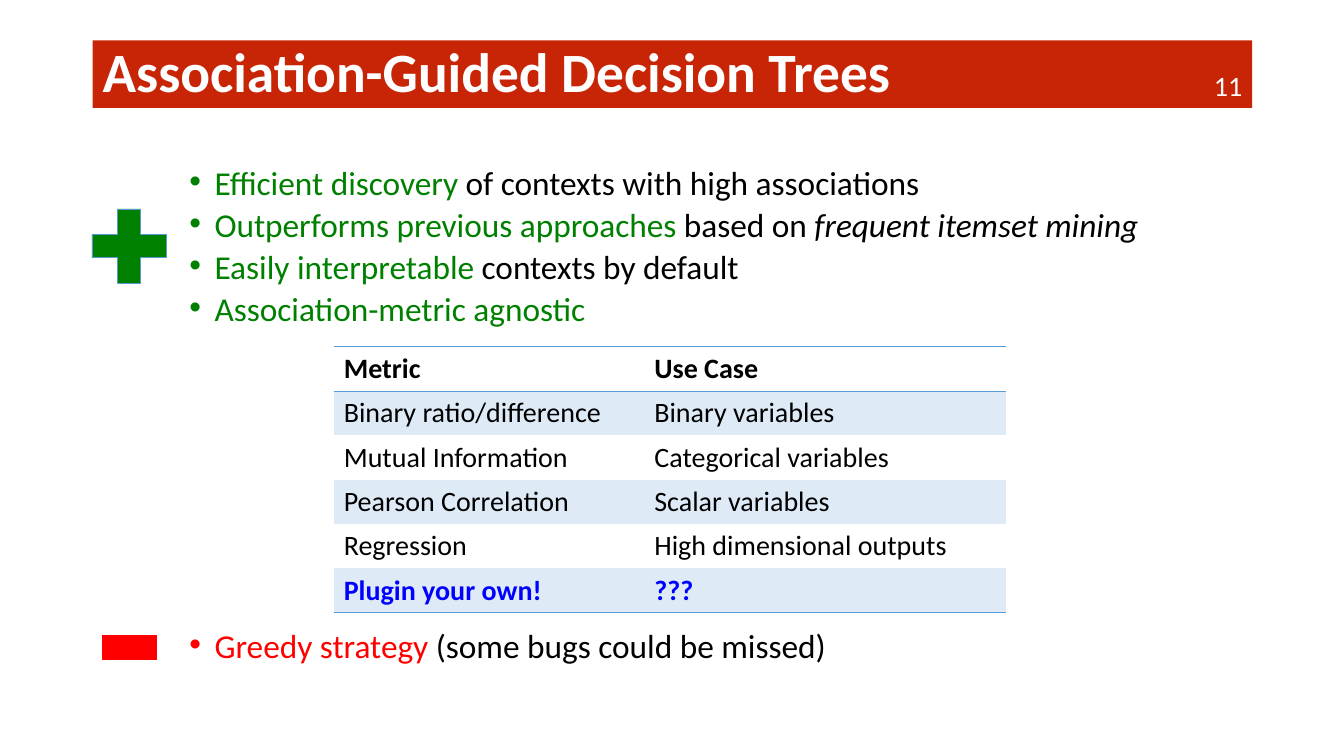
import pptx
import pptx.util
import pptx.dml.color
import pptx.enum.shapes
import pptx.enum.text
import pptx.oxml
import pptx.oxml.ns
from pptx.util import Inches

RGBColor = pptx.dml.color.RGBColor
SHAPE = pptx.enum.shapes.MSO_SHAPE
ANCHOR = pptx.enum.text.MSO_ANCHOR
ALIGN = pptx.enum.text.PP_ALIGN

WHITE = RGBColor(0xFF, 0xFF, 0xFF)
BLACK = RGBColor(0x00, 0x00, 0x00)
BRICK = RGBColor(0xC8, 0x25, 0x06)
GREEN = RGBColor(0x00, 0x80, 0x00)
RED = RGBColor(0xFF, 0x00, 0x00)
BLUE = RGBColor(0x00, 0x00, 0xFF)
STEEL = RGBColor(0x5B, 0x9B, 0xD5)
BAND = RGBColor(0xDE, 0xEB, 0xF7)

FONT = "Calibri"
NO_STYLE = "{2D5ABB26-0587-4C30-8999-92F81FD0307C}"
BULLET_STEP = 0.417

PROS = [
    [("Efficient discovery ", GREEN), ("of contexts with high associations", BLACK)],
    [("Outperforms previous approaches ", GREEN), ("based on ", BLACK),
     ("frequent itemset mining", BLACK, {"italic": True})],
    [("Easily interpretable ", GREEN), ("contexts by default", BLACK)],
    [("Association-metric agnostic", GREEN)],
]
CONS = [[("Greedy strategy", RED), (" (some bugs could be missed)", BLACK)]]
METRICS = [
    ("Metric", "Use Case"),
    ("Binary ratio/difference", "Binary variables"),
    ("Mutual Information", "Categorical variables"),
    ("Pearson Correlation", "Scalar variables"),
    ("Regression", "High dimensional outputs"),
    ("Plugin your own!", "???"),
]


def add_span(para, text, size, color, extra=None):
    span = para.add_run()
    span.text = text
    span.font.color.rgb = color
    formats = {"name": FONT, "size": pptx.util.Pt(size), **(extra or {})}
    for name, value in formats.items():
        setattr(span.font, name, value)


def add_filled_shape(page, kind, box, fill, line=None):
    shape = page.shapes.add_shape(kind, *map(Inches, box))
    shape.shadow.inherit = False
    shape.fill.solid()
    shape.fill.fore_color.rgb = fill
    if line is None:
        shape.line.fill.background()
    else:
        shape.line.color.rgb = line
        shape.line.width = pptx.util.Pt(0.5)
    return shape


def add_header(page, box, title, number):
    """Draw the title bar with the page number in its lower right corner."""
    left, top, width, height = box
    bar = add_filled_shape(page, SHAPE.RECTANGLE, box, BRICK)
    number_width, number_height = 0.69, 0.4
    corner = page.shapes.add_textbox(
        Inches(left + width - number_width), Inches(top + height - number_height),
        Inches(number_width), Inches(number_height))
    for shape, text, size, align, bold in (
            (bar, title, 39.6, ALIGN.LEFT, True),
            (corner, number, 20, ALIGN.RIGHT, False)):
        frame = shape.text_frame
        frame.word_wrap = True
        frame.vertical_anchor = ANCHOR.MIDDLE
        para = frame.paragraphs[0]
        para.alignment = align
        para.line_spacing = 0.9
        add_span(para, text, size, WHITE, {"bold": bold})


def add_bullets(page, box, items):
    frame = page.shapes.add_textbox(*map(Inches, box)).text_frame
    frame.word_wrap = True
    for index, item in enumerate(items):
        para = frame.add_paragraph() if index else frame.paragraphs[0]
        para.line_spacing = 0.7
        para.space_before = pptx.util.Pt(10)
        props = para._p.get_or_add_pPr()
        props.set("marL", str(Inches(0.25)))
        props.set("indent", str(Inches(-0.25)))
        for tag, key, value in (("a:buFont", "typeface", "Arial"), ("a:buChar", "char", "•")):
            bullet = pptx.oxml.parse_xml(f"<{tag} {pptx.oxml.ns.nsdecls('a')}/>")
            bullet.set(key, value)
            props.append(bullet)
        for text, color, *extra in item:
            add_span(para, text, 23.8, color, *extra)


def add_rule(cell, side):
    """Draw a cell border on the top (T) or bottom (B) side."""
    border = pptx.oxml.parse_xml(
        f'<a:ln{side} {pptx.oxml.ns.nsdecls("a")} w="12700"><a:solidFill>'
        f'<a:srgbClr val="{STEEL}"/></a:solidFill></a:ln{side}>')
    props = cell._tc.get_or_add_tcPr()
    rules = [child for child in props if child.tag.endswith(("lnT", "lnB"))]
    props.insert(len(rules), border)


def add_metric_table(page, box, widths, rows):
    frame = page.shapes.add_table(len(rows), len(widths), *map(Inches, box))
    table = frame.table
    table.first_row = table.horz_banding = False
    table._tbl.tblPr.find(pptx.oxml.ns.qn("a:tableStyleId")).text = NO_STYLE
    for column, width in zip(table.columns, widths):
        column.width = Inches(width)
    last = len(rows) - 1
    for r, row in enumerate(rows):
        table.rows[r].height = Inches(box[3] / len(rows))
        for c, text in enumerate(row):
            cell = table.cell(r, c)
            if r % 2:
                cell.fill.solid()
                cell.fill.fore_color.rgb = BAND
            else:
                cell.fill.background()
            add_span(cell.text_frame.paragraphs[0], text, 20,
                     BLUE if r == last else BLACK, {"bold": r in (0, last)})
            if r == 0:
                add_rule(cell, "T")
            if r in (0, last):
                add_rule(cell, "B")


def main():
    deck = pptx.Presentation()
    deck.slide_width, deck.slide_height = Inches(13.33), Inches(7.5)
    page = deck.slides.add_slide(deck.slide_layouts[6])

    add_header(page, (0.92, 0.4, 11.5, 0.67), "Association-Guided Decision Trees", "11")
    left, top, width = 1.78, 1.67, 10.64
    add_bullets(page, (left, top, width, 1.75), PROS)
    add_bullets(page, (left, top + 11 * BULLET_STEP, width, 0.5), CONS)
    add_filled_shape(page, SHAPE.MATH_PLUS, (0.78, 1.94, 1, 1), GREEN, STEEL)
    add_filled_shape(page, SHAPE.MATH_MINUS, (0.92, 5.92, 0.73, 1), RED, RED)
    add_metric_table(page, (3.31, 3.44, 6.67, 2.64), (3.08, 3.59), METRICS)
    deck.save("out.pptx")


if __name__ == "__main__":
    main()
